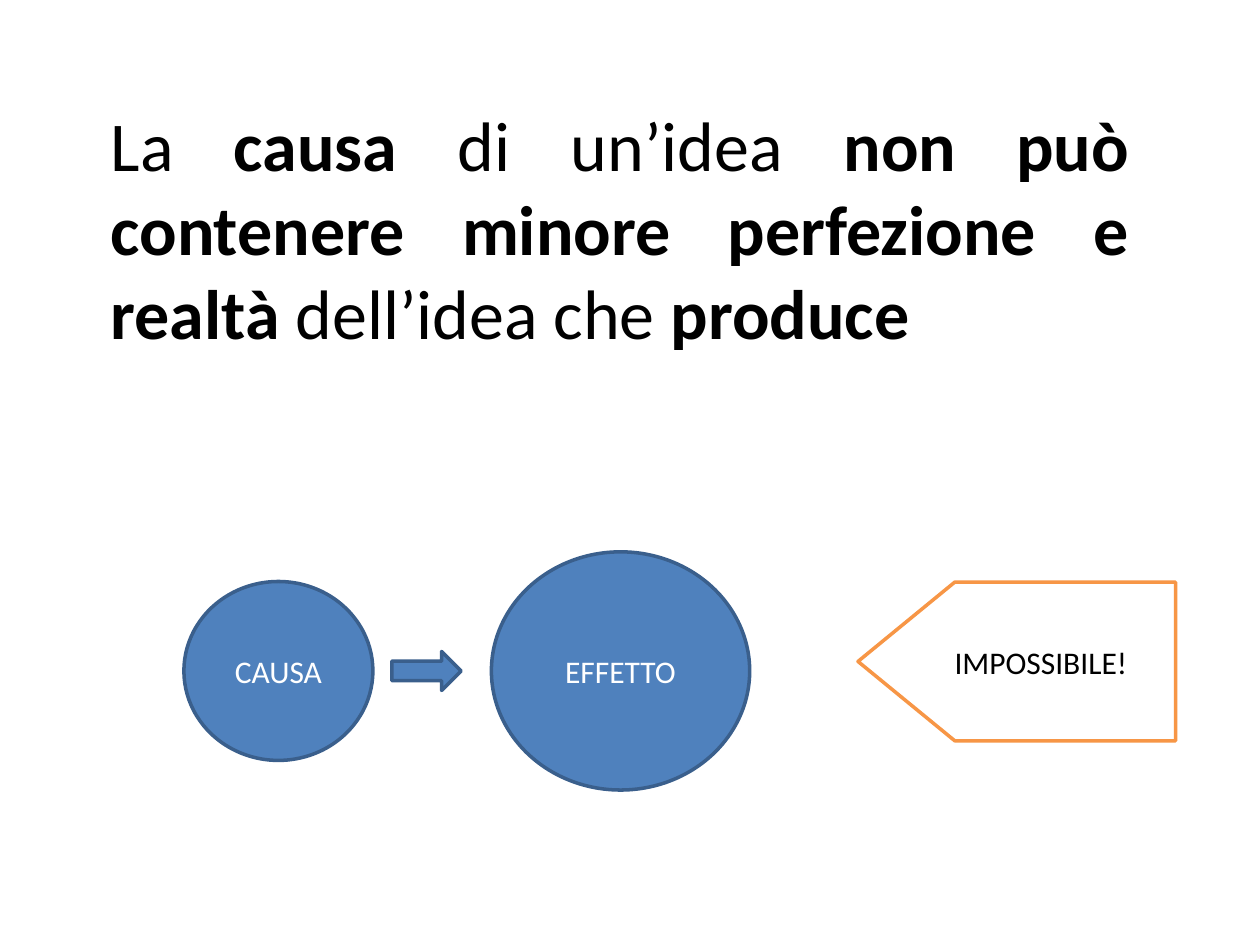
from pptx import Presentation
from pptx.dml.color import RGBColor
from pptx.enum.shapes import MSO_SHAPE
from pptx.enum.text import MSO_ANCHOR, MSO_AUTO_SIZE, PP_ALIGN
from pptx.util import Inches, Pt

COLORS = {
    "blue": "4F81BD",
    "navy": "3A5F8C",
    "orange": "F79646",
    "white": "FFFFFF",
    "black": "000000",
}


def color(name):
    return RGBColor.from_string(COLORS[name])


def write(frame, runs, size=18, ink="white", align=PP_ALIGN.CENTER):
    """Fill the frame with one paragraph of (text, bold) runs."""
    frame.word_wrap = True
    para = frame.paragraphs[0]
    para.alignment = align
    for text, bold in runs:
        run = para.add_run()
        run.text = text
        run.font.name = "Calibri"
        run.font.size = Pt(size)
        run.font.bold = bold
        run.font.color.rgb = color(ink)


def add_part(slide, kind, box, text="", fill="blue", line="navy", ink="white"):
    part = slide.shapes.add_shape(kind, *map(Inches, box))
    part.shadow.inherit = False
    part.fill.solid()
    part.fill.fore_color.rgb = color(fill)
    part.line.color.rgb = color(line)
    part.line.width = Pt(2)
    if text:
        part.text_frame.vertical_anchor = MSO_ANCHOR.MIDDLE
        write(part.text_frame, [(text, False)], ink=ink)
    return part


def add_claim(slide, box):
    frame = slide.shapes.add_textbox(*map(Inches, box)).text_frame
    write(frame, [
        ("La ", False),
        ("causa", True),
        (" di un’idea ", False),
        ("non può contenere minore perfezione e realtà ", True),
        ("dell’idea che ", False),
        ("produce", True),
    ], size=40, ink="black", align=PP_ALIGN.JUSTIFY)
    frame.auto_size = MSO_AUTO_SIZE.SHAPE_TO_FIT_TEXT


def add_chain(slide, left, top, width, height):
    """Draw cause, arrow and effect, all centred on one horizontal axis."""
    mid = top + height / 2

    def place(kind, x, wide, high, text=""):
        add_part(slide, kind, (x, mid - high / 2, wide, high), text)

    place(MSO_SHAPE.OVAL, left, 1.5, 1.42, "CAUSA")
    place(MSO_SHAPE.OVAL, left + width - 2.05, 2.05, height, "EFFETTO")
    place(MSO_SHAPE.RIGHT_ARROW, left + 1.65, 0.55, 0.31)


def add_verdict(slide, box):
    sign = add_part(slide, MSO_SHAPE.PENTAGON, box, "IMPOSSIBILE!",
                    fill="white", line="orange", ink="black")
    sign.adjustments[0] = 0.61
    sign.element.spPr.xfrm.set("flipH", "1")


def main():
    deck = Presentation()
    deck.slide_width = Inches(10)
    deck.slide_height = Inches(7.5)
    slide = deck.slides.add_slide(deck.slide_layouts[6])
    add_claim(slide, (0.78, 0.76, 8.28, 2.12))
    add_chain(slide, 1.46, 4.38, 4.49, 1.89)
    add_verdict(slide, (6.81, 4.62, 2.52, 1.26))
    deck.save("out.pptx")


if __name__ == "__main__":
    main()
